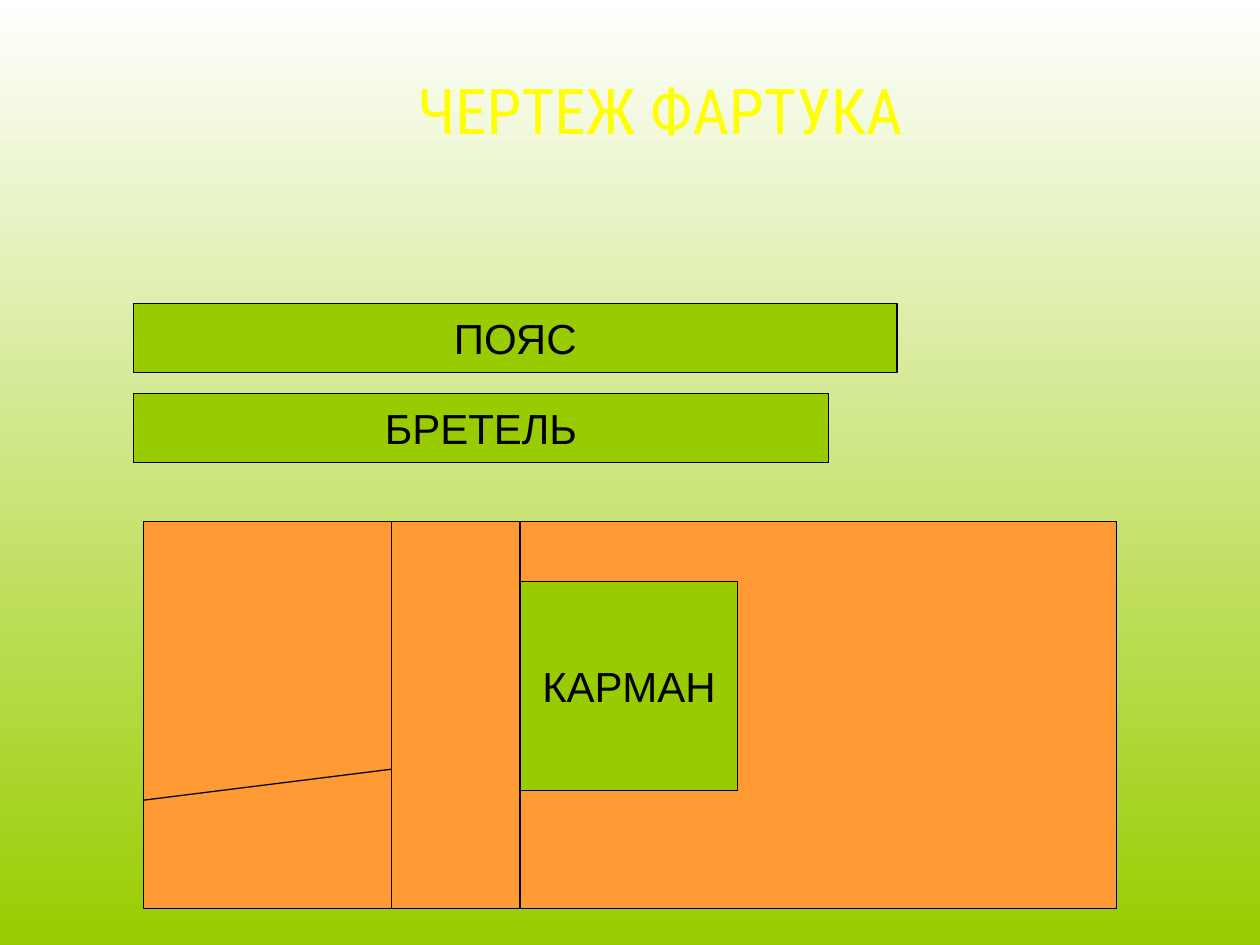
import pptx
import pptx.util
import pptx.dml.color
import pptx.enum.shapes
import pptx.enum.text
import pptx.oxml.ns
from lxml import etree

Inches, Pt = pptx.util.Inches, pptx.util.Pt
GREEN, ORANGE, BLACK, WHITE, YELLOW = "99CC00", "FF9933", "000000", "FFFFFF", "FFFF00"


def rgb(code):
    return pptx.dml.color.RGBColor.from_string(code)


def write(shape, text, size, font, color, anchor):
    frame = shape.text_frame
    frame.word_wrap = False
    frame.vertical_anchor = anchor
    para = frame.paragraphs[0]
    para.alignment = pptx.enum.text.PP_ALIGN.CENTER
    run = para.add_run()
    run.text = text
    run.font.size = Pt(size)
    run.font.name = font
    run.font.color.rgb = rgb(color)


def piece(slide, box, fill, label=None):
    """Add one outlined pattern piece, with its name if it has one."""
    shape = slide.shapes.add_shape(
        pptx.enum.shapes.MSO_SHAPE.RECTANGLE, *map(Inches, box))
    shape.shadow.inherit = False
    shape.fill.solid()
    shape.fill.fore_color.rgb = rgb(fill)
    shape.line.color.rgb = rgb(BLACK)
    shape.line.width = Pt(0.75)
    if label:
        write(shape, label, 24, "Arial", BLACK, pptx.enum.text.MSO_ANCHOR.MIDDLE)


def seam(slide, start, end):
    line = slide.shapes.add_connector(
        pptx.enum.shapes.MSO_CONNECTOR.STRAIGHT, *map(Inches, start + end))
    line.line.color.rgb = rgb(BLACK)
    line.line.width = Pt(0.75)
    props = line._element.spPr
    etree.SubElement(props, pptx.oxml.ns.qn("a:effectLst"))


def backdrop(slide):
    fill = slide.background.fill
    fill.gradient()
    fill.gradient_angle = 270
    for stop, color in zip(fill.gradient_stops, (WHITE, GREEN)):
        stop.color.rgb = rgb(color)


def title(slide, box):
    shape = slide.shapes.add_textbox(*map(Inches, box))
    write(shape, "ЧЕРТЕЖ ФАРТУКА", 36, "Roboto Condensed", YELLOW,
          pptx.enum.text.MSO_ANCHOR.TOP)


def straps(slide, box):
    left, top, width, height = box
    thick, step = 0.435 * height, 0.565 * height
    for row, (label, share) in enumerate((("ПОЯС", 1), ("БРЕТЕЛЬ", 0.91))):
        piece(slide, (left, top + row * step, width * share, thick), GREEN, label)


def apron(slide, box):
    """Draw the apron body, its fold and cut lines, and the pocket."""
    left, top, width, height = box
    bib, waist = left + 0.255 * width, left + 0.387 * width
    base = top + height
    piece(slide, box, ORANGE)
    seam(slide, (bib, top), (bib, base))
    seam(slide, (left, top + 0.72 * height), (bib, top + 0.64 * height))
    seam(slide, (waist, top), (waist, base))
    pocket = (waist, top + 0.155 * height, 0.224 * width, 0.54 * height)
    piece(slide, pocket, GREEN, "КАРМАН")


def main():
    deck = pptx.Presentation()
    deck.slide_width, deck.slide_height = Inches(10), Inches(7.5)
    slide = deck.slides.add_slide(deck.slide_layouts[6])
    backdrop(slide)
    straps(slide, (1.06, 2.41, 6.06, 1.26))
    apron(slide, (1.14, 4.14, 7.72, 3.07))
    title(slide, (2.72, 0.52, 5.04, 1.02))
    deck.save("out.pptx")


if __name__ == "__main__":
    main()
